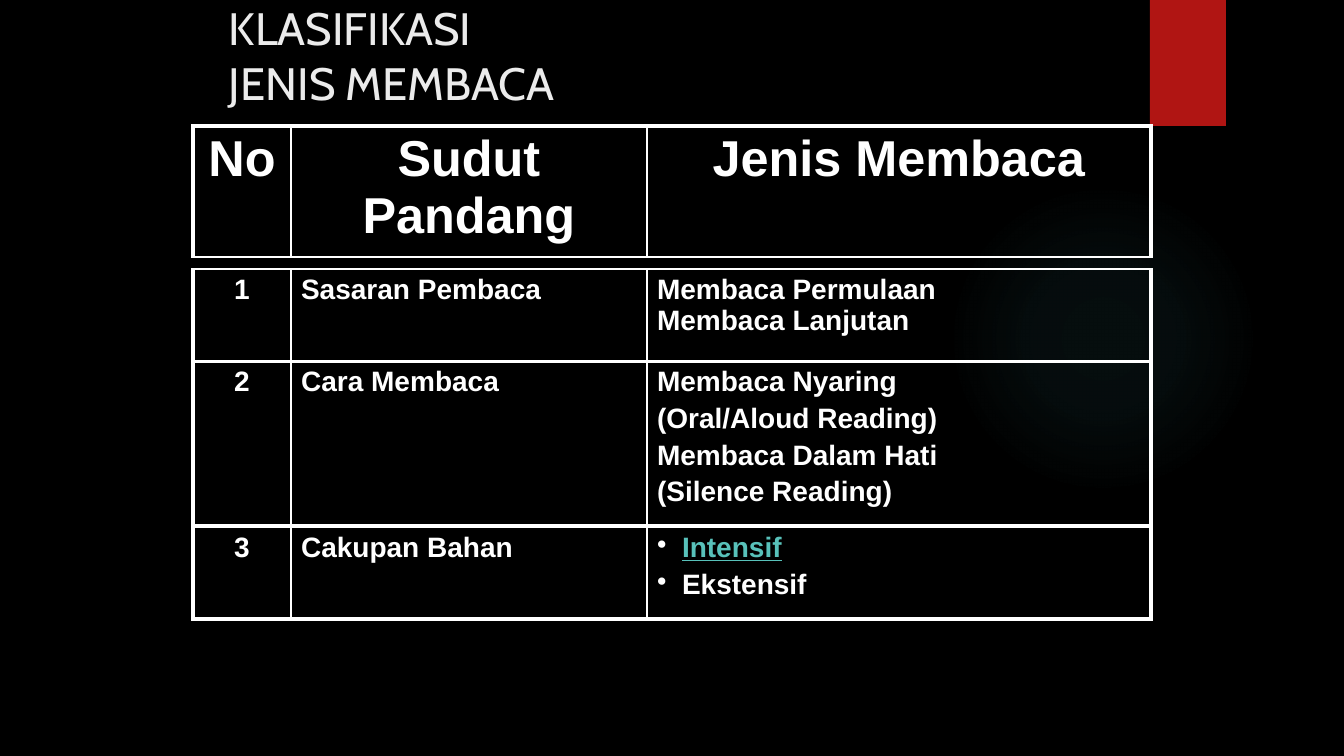
import pptx
import pptx.util
import pptx.dml.color
import pptx.enum.shapes
import pptx.enum.text
import pptx.oxml
import pptx.oxml.ns

PX = 914400 / 100.8
BLACK = pptx.dml.color.RGBColor(0x00, 0x00, 0x00)
WHITE = pptx.dml.color.RGBColor(0xFF, 0xFF, 0xFF)
OFF_WHITE = pptx.dml.color.RGBColor(0xEB, 0xEB, 0xEB)
RED = pptx.dml.color.RGBColor(0xB0, 0x15, 0x13)
GLOW = pptx.dml.color.RGBColor(0x50, 0xB9, 0xC1)
TEAL = pptx.dml.color.RGBColor(0x58, 0xC1, 0xBA)
NS = pptx.oxml.ns.nsdecls("a")
CENTER = pptx.enum.text.PP_ALIGN.CENTER


def px(*lengths):
    """Turn pixel lengths into EMU."""
    return [round(length * PX) for length in lengths]


def add_border(cell, side, points):
    cell._tc.get_or_add_tcPr().append(pptx.oxml.parse_xml(
        f'<a:ln{side} {NS} w="{points * 12700}"><a:solidFill>'
        f'<a:srgbClr val="{WHITE}"/></a:solidFill></a:ln{side}>'))


prs = pptx.Presentation()
prs.slide_width, prs.slide_height = px(1344, 756)
slide = prs.slides.add_slide(prs.slide_layouts[6])
slide.background.fill.solid()
slide.background.fill.fore_color.rgb = BLACK

# Backdrop: faint glow and red tab
glow = slide.shapes.add_shape(
    pptx.enum.shapes.MSO_SHAPE.OVAL, *px(948, 184, 310, 310))
glow.shadow.inherit = False
glow.line.fill.background()
stops = "".join(
    f'<a:gs pos="{position * 1000}"><a:srgbClr val="{GLOW}">'
    f'<a:alpha val="{alpha * 1000}"/></a:srgbClr></a:gs>'
    for position, alpha in [(0, 7), (36, 6), (69, 0)])
glow._element.spPr.find(pptx.oxml.ns.qn("a:prstGeom")).addnext(pptx.oxml.parse_xml(
    f'<a:gradFill {NS}><a:gsLst>{stops}</a:gsLst><a:path path="circle">'
    '<a:fillToRect l="50000" t="50000" r="50000" b="50000"/></a:path></a:gradFill>'))

red_tab = slide.shapes.add_shape(
    pptx.enum.shapes.MSO_SHAPE.RECTANGLE, *px(1150, 0, 76, 126))
red_tab.shadow.inherit = False
red_tab.fill.solid()
red_tab.fill.fore_color.rgb = RED
red_tab.line.fill.background()

# Title
title = slide.shapes.add_textbox(*px(219, -8, 907, 126)).text_frame
title.word_wrap = True
title.vertical_anchor = pptx.enum.text.MSO_ANCHOR.MIDDLE
title.text = "KLASIFIKASI\vJENIS MEMBACA"
for run in title.paragraphs[0].runs:
    run.font.name = "Cabin"
    run.font.size = pptx.util.Pt(32.4)
    run.font.color.rgb = OFF_WHITE

# Four one-row tables: top, height, text size, space between paragraphs, texts
COLUMNS = [98, 356, 504]
BANDS = [
    (126, 131, 36, 0, ["No", "Sudut Pandang", "Jenis Membaca"]),
    (269, 93, 20, 0, ["1", "Sasaran Pembaca", "Membaca Permulaan\nMembaca Lanjutan"]),
    (361, 164, 20, 4, ["2", "Cara Membaca",
                       "Membaca Nyaring\n(Oral/Aloud Reading)\n"
                       "Membaca Dalam Hati\n(Silence Reading)"]),
    (527, 92, 20, 4, ["3", "Cakupan Bahan", "Intensif\nEkstensif"]),
]
for band, (top, height, size, gap, texts) in enumerate(BANDS):
    is_header, is_last = band == 0, band == len(BANDS) - 1
    table = slide.shapes.add_table(
        1, 3, *px(193, top, sum(COLUMNS), height)).table
    table.first_row = table.horz_banding = False
    for column, (width, text) in enumerate(zip(COLUMNS, texts)):
        table.columns[column].width = px(width)[0]
        cell = table.cell(0, column)
        add_border(cell, "L", 3 if column == 0 else 1)
        add_border(cell, "R", 3 if column == 2 else 1)
        add_border(cell, "T", 3 if is_header else 1)
        add_border(cell, "B", 3 if is_last else 1)
        cell.fill.background()
        cell.text_frame.text = text
        for index, paragraph in enumerate(cell.text_frame.paragraphs):
            if is_header or column == 0:
                paragraph.alignment = CENTER
            if index and gap:
                paragraph.space_before = pptx.util.Pt(gap)
            if is_last and column == 2:
                indent = px(25)[0]
                properties = paragraph._p.get_or_add_pPr()
                properties.set("marL", str(indent))
                properties.set("indent", str(-indent))
                properties.append(pptx.oxml.parse_xml(f'<a:buClr {NS}><a:srgbClr val="{WHITE}"/></a:buClr>'))
                properties.append(pptx.oxml.parse_xml(f'<a:buChar {NS} char="•"/>'))
            font = paragraph.runs[0].font
            font.name = "Arial"
            font.size = pptx.util.Pt(size)
            font.bold = True
            font.underline = paragraph.text == "Intensif"
            font.color.rgb = TEAL if font.underline else WHITE

prs.save("out.pptx")
